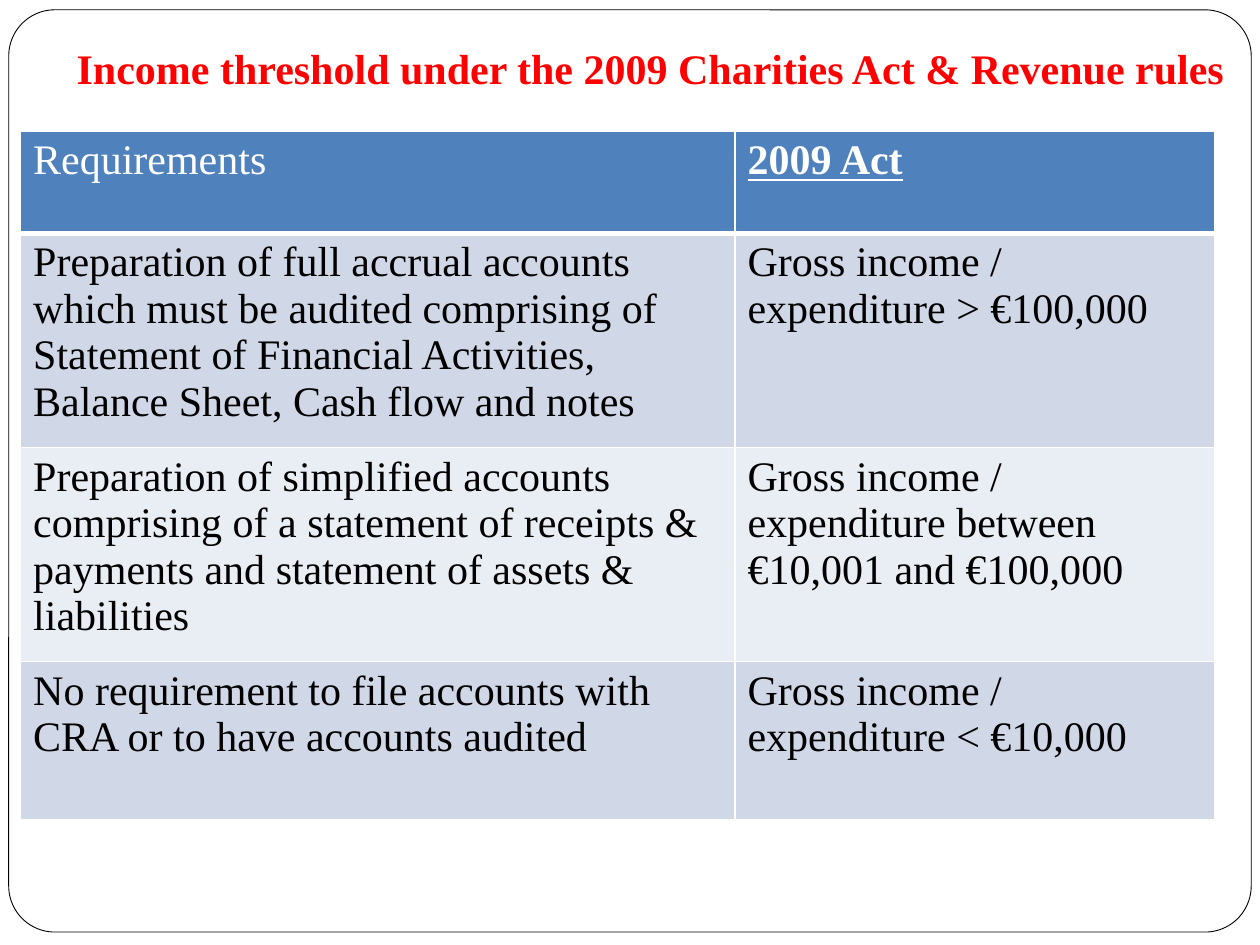
from pptx import Presentation
from pptx.dml.color import RGBColor
from pptx.enum.shapes import MSO_SHAPE
from pptx.enum.text import MSO_ANCHOR
from pptx.oxml import parse_xml
from pptx.oxml.ns import nsdecls
from pptx.util import Pt

ROUNDED = MSO_SHAPE.ROUNDED_RECTANGLE
BOTTOM = MSO_ANCHOR.BOTTOM

COLOURS = {
    "white": "FFFFFF",
    "black": "000000",
    "title": "FF0000",
    "header": "4F81BD",
    "odd row": "D0D8E8",
    "even row": "E9EDF4",
}

TITLE = "Income threshold under the 2009 Charities Act & Revenue rules"
ROWS = [
    ("Requirements", "2009 Act"),
    ("Preparation of full accrual accounts which must be audited comprising of "
     "Statement of Financial Activities, Balance Sheet, Cash flow and notes",
     "Gross income / expenditure > €100,000"),
    ("Preparation of simplified accounts comprising of a statement of receipts "
     "& payments and statement of assets & liabilities",
     "Gross income / expenditure between €10,001 and €100,000"),
    ("No requirement to file accounts with CRA or to have accounts audited",
     "Gross income / expenditure < €10,000"),
]
COLUMN_WIDTHS = (408.2, 274.3)
ROW_HEIGHTS = (58.3, 83.5, 96.5, 90)


def rgb(name):
    return RGBColor.from_string(COLOURS[name])


class SlideBuilder:
    """Holds the text style and the page being filled; lengths are in points."""

    font = {"name": "Times New Roman", "size": Pt(24)}

    def __init__(self, page):
        self.page = page

    def add_text(self, frame, text, colour, **format_values):
        span = frame.paragraphs[0].add_run()
        span.text = text
        for name, value in {**self.font, **format_values}.items():
            setattr(span.font, name, value)
        span.font.color.rgb = rgb(colour)

    def border_frame(self, left, top, width, height, rounding):
        box = self.page.shapes.add_shape(
            ROUNDED, Pt(left), Pt(top), Pt(width), Pt(height))
        box.adjustments[0] = rounding
        box.shadow.inherit = False
        box.fill.solid()
        box.fill.fore_color.rgb = rgb("white")
        box.line.color.rgb = rgb("black")
        box.line.width = Pt(0.5)

    def title(self, text, left, top, width, height):
        box = self.page.shapes.add_textbox(
            Pt(left), Pt(top), Pt(width), Pt(height))
        frame = box.text_frame
        layout = {"word_wrap": True, "vertical_anchor": BOTTOM,
                  "margin_bottom": Pt(7.2)}
        for name, value in layout.items():
            setattr(frame, name, value)
        self.add_text(frame, text, "title", bold=True)

    def cell_borders(self, cell, widths):
        """Draw white borders; widths maps the sides L, R, T, B to points."""
        properties = cell._tc.get_or_add_tcPr()
        for side, width in widths.items():
            properties.append(parse_xml(
                f'<a:ln{side} {nsdecls("a")} w="{Pt(width)}"><a:solidFill>'
                f'<a:srgbClr val="{COLOURS["white"]}"/>'
                f'</a:solidFill></a:ln{side}>'))

    def table(self, rows, left, top, column_widths, row_heights):
        table = self.page.shapes.add_table(
            len(rows), len(column_widths), Pt(left), Pt(top),
            Pt(sum(column_widths)), Pt(sum(row_heights))).table
        for column, width in zip(table.columns, column_widths):
            column.width = Pt(width)
        for row, height in zip(table.rows, row_heights):
            row.height = Pt(height)
        for i, texts in enumerate(rows):
            fill = "header" if i == 0 else "odd row" if i % 2 else "even row"
            borders = {"L": 1, "R": 1, "T": 3 if i == 1 else 1,
                       "B": 3 if i == 0 else 1}
            for j, text in enumerate(texts):
                cell = table.cell(i, j)
                self.cell_borders(cell, borders)
                cell.fill.solid()
                cell.fill.fore_color.rgb = rgb(fill)
                emphasis = i == 0 and j == 1
                self.add_text(cell.text_frame, text, "black" if i else "white",
                              bold=emphasis, underline=emphasis)


def main():
    deck = Presentation()
    deck.slide_width, deck.slide_height = Pt(720), Pt(540)
    builder = SlideBuilder(deck.slides.add_slide(deck.slide_layouts[6]))
    builder.border_frame(5, 5.6, 710, 527, rounding=0.05)
    builder.title(TITLE, 36.7, 9.4, 675.4, 51)
    builder.table(ROWS, 11.8, 75, COLUMN_WIDTHS, ROW_HEIGHTS)
    deck.save("out.pptx")


if __name__ == "__main__":
    main()
